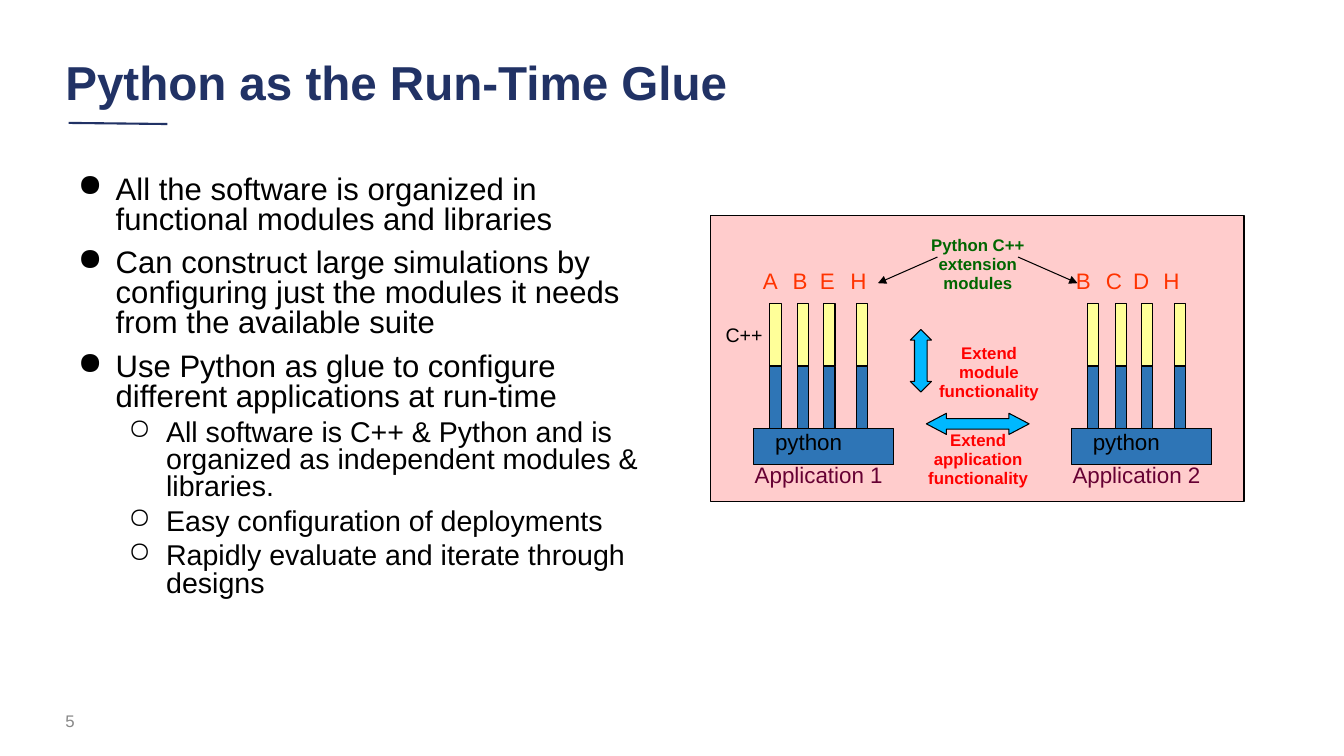
from lxml.etree import SubElement
from pptx import Presentation
from pptx.dml.color import RGBColor
from pptx.enum.shapes import MSO_CONNECTOR, MSO_SHAPE
from pptx.enum.text import MSO_ANCHOR, PP_ALIGN
from pptx.oxml.ns import qn
from pptx.util import Pt

COLORS = {
    "navy": "213265", "grey": "888888", "black": "000000", "panel": "FFCCCC",
    "python": "2E75B6", "cpp": "FFFF99", "arrow": "00B8FF", "module": "FF3300",
    "extension": "006600", "extend": "FF0000", "application": "660033",
}
RGB = {name: RGBColor.from_string(value) for name, value in COLORS.items()}

prs = Presentation()
prs.slide_width, prs.slide_height = Pt(960), Pt(540)
slide = prs.slides.add_slide(prs.slide_layouts[6])
shapes = slide.shapes


def add_text(text, box, size, color, bold=False, wrap=False, align=PP_ALIGN.LEFT,
             spacing=None, anchor=MSO_ANCHOR.TOP):
    """Add one paragraph of text; box is left, top, width, height in points."""
    frame = shapes.add_textbox(*map(Pt, box)).text_frame
    frame.word_wrap = wrap
    frame.vertical_anchor = anchor
    frame.text = text
    paragraph = frame.paragraphs[0]
    paragraph.alignment = align
    paragraph.line_spacing = spacing
    font = paragraph.runs[0].font
    font.name, font.size, font.bold = "Arial", Pt(size), bold
    font.color.rgb = RGB[color]


def add_block(kind, box, fill):
    block = shapes.add_shape(kind, *map(Pt, box))
    block.shadow.inherit = False
    block.fill.solid()
    block.fill.fore_color.rgb = RGB[fill]
    block.line.color.rgb = RGB["black"]
    block.line.width = Pt(0.75)
    return block


# Title and page number
add_text("Python as the Run-Time Glue", (39.6, 33, 800, 55), 34, "navy", bold=True,
         wrap=True, spacing=0.9, anchor=MSO_ANCHOR.MIDDLE)
add_text("5", (39.6, 500.4, 216, 28.8), 12, "grey", wrap=True, anchor=MSO_ANCHOR.MIDDLE)

# Bulleted list
points = [
    (0, "All the software is organized in functional modules and libraries"),
    (0, "Can construct large simulations by configuring just the modules it needs "
        "from the available suite"),
    (0, "Use Python as glue to configure different applications at run-time"),
    (1, "All software is C++ & Python and is organized as independent modules & libraries."),
    (1, "Easy configuration of deployments"),
    (1, "Rapidly evaluate and iterate through designs"),
]
levels = [("●", 36, 22.2, 10), ("○", 72, 20.4, 5)]
body = shapes.add_textbox(Pt(39.6), Pt(122.4), Pt(427), Pt(343)).text_frame
body.word_wrap = True
for index, (level, text) in enumerate(points):
    bullet, indent, size, gap = levels[level]
    point = body.add_paragraph() if index else body.paragraphs[0]
    point.text = text
    point.level = level
    point.line_spacing = 0.8
    point.space_before = Pt(gap if index else 0)
    props = point._p.get_or_add_pPr()
    props.set("marL", str(Pt(indent)))
    props.set("indent", str(Pt(-27)))
    bullet_color = SubElement(props, qn("a:buClr"))
    SubElement(bullet_color, qn("a:srgbClr"), val=COLORS["black"])
    SubElement(props, qn("a:buChar"), char=bullet)
    font = point.runs[0].font
    font.name, font.size = "Arial", Pt(size)
    font.color.rgb = RGB["black"]

# Diagram panel
add_block(MSO_SHAPE.RECTANGLE, (507.6, 154, 381, 204), "panel")

# Applications: a python base carrying four modules, C++ above python
applications = [("Application 1", 538.5, "ABEH", 537.8),
                ("Application 2", 765.5, "BCDH", 761.5)]
stem_offsets = (11.5, 31, 50, 73.2)
letter_offsets = (0, 21.3, 40.8, 62.5)
for name, left, modules, letters_left in applications:
    add_block(MSO_SHAPE.RECTANGLE, (left, 306, 100, 26), "python")
    for module, stem, letter in zip(modules, stem_offsets, letter_offsets):
        for top, part in ((261.5, "python"), (217, "cpp")):
            add_block(MSO_SHAPE.RECTANGLE, (left + stem, top, 8, 44.5), part)
        add_text(module, (letters_left + letter, 187.2, 25.5, 26.6), 16, "module")
    add_text("python", (left + 8, 302.4, 63.4, 26.6), 16, "black")
    add_text(name, (left - 6.5, 326.2, 106.6, 26.6), 16, "application")
add_text("C++", (511.2, 226.8, 41, 24.5), 14, "black")

# Double arrows
wide = add_block(MSO_SHAPE.LEFT_RIGHT_ARROW, (661.7, 295.2, 73.4, 15.1), "arrow")
wide.adjustments[0], wide.adjustments[1] = 0.5, 0.95
tall = add_block(MSO_SHAPE.UP_DOWN_ARROW, (650.2, 235.4, 15.1, 44.6), "arrow")
tall.adjustments[0], tall.adjustments[1] = 0.5, 0.6

# Centred captions
captions = [("Python C++ extension modules", 650, 165, "extension"),
            ("Extend module functionality", 658, 242.6, "extend"),
            ("Extend application functionality", 650.2, 304.6, "extend")]
for text, left, top, color in captions:
    add_text(text, (left, top, 97, 48.2), 12, color, bold=True, wrap=True,
             align=PP_ALIGN.CENTER, spacing=0.94)

# Title rule, and pointers from the caption to the module letters
lines = [((49, 87.8), (119.5, 88.6), "navy", 1.5, False),
         ((669.6, 183.6), (627.1, 202.3), "black", 0.75, True),
         ((727.2, 183.6), (769.7, 202.3), "black", 0.75, True)]
for start, end, color, width, pointed in lines:
    line = shapes.add_connector(MSO_CONNECTOR.STRAIGHT, *map(Pt, start + end))
    line.line.color.rgb = RGB[color]
    line.line.width = Pt(width)
    if pointed:
        SubElement(line.line._get_or_add_ln(), qn("a:tailEnd"), type="triangle")
    SubElement(line._element.spPr, qn("a:effectLst"))

prs.save("out.pptx")
